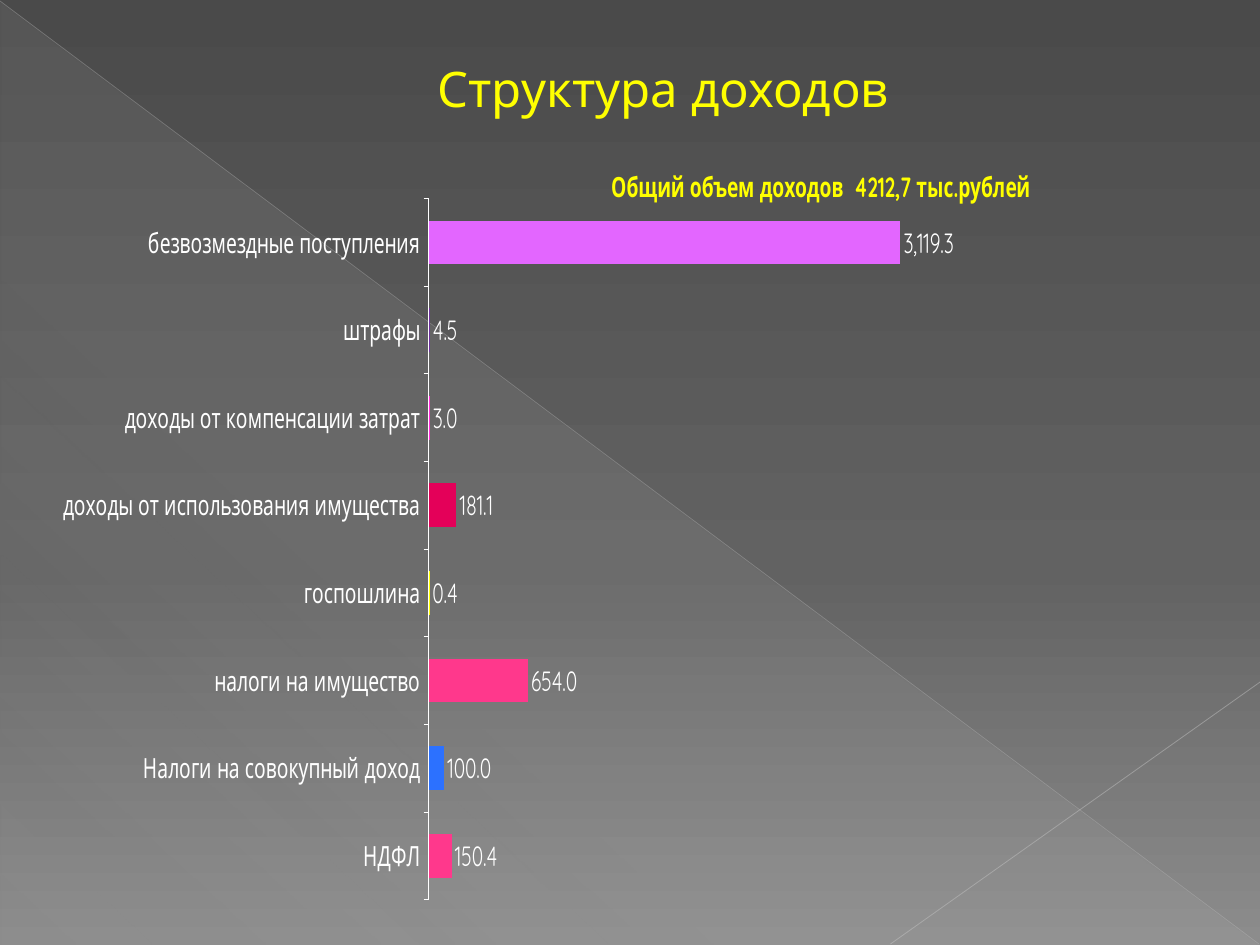
from dataclasses import dataclass

from pptx import Presentation, util as u
from pptx.chart.data import CategoryChartData
from pptx.dml.color import RGBColor
from pptx.enum import chart as charts, shapes, text
from pptx.oxml import parse_xml
from pptx.oxml.ns import nsdecls


@dataclass(frozen=True)
class Theme:
    font: str = "Quicksand"
    title_size: float = 28
    chart_size: float = 15.9
    heading: str = "FFFF00"
    heading_outline: str = "B12761"
    body: str = "FFFFFF"
    background: tuple = ((0, "4A4A4A", 100), (60, "626262", 100), (100, "8C8C8C", 100))
    triangle: tuple = ((0, "D2D2D2", 10), (70, "D2D2D2", 8), (100, "D2D2D2", 1))
    long_line: str = "BFBFBF"
    short_line: str = "C6C6C6"


THEME = Theme()

# Category, value in thousand roubles, bar colour
INCOME = [
    ("НДФЛ", 150.4, "FF388C"),
    ("Налоги на совокупный доход", 100, "2C71FF"),
    ("налоги на имущество", 654, "FF388C"),
    ("госпошлина", 0.4, "FFFF00"),
    ("доходы от использования имущества", 181.1, "E40059"),
    ("доходы от компенсации затрат", 3, "FF2BD8"),
    ("штрафы", 4.5, "7030A0"),
    ("безвозмездные поступления", 3119.3, "E366FF"),
]


def color(value):
    return RGBColor.from_string(value)


def set_gradient(parent, stops, angle):
    """Replace the solid fill of a properties element by a linear gradient."""
    stop_xml = "".join(
        f'<a:gs pos="{position * 1000}"><a:srgbClr val="{value}">'
        f'<a:alpha val="{opacity * 1000}"/></a:srgbClr></a:gs>'
        for position, value, opacity in stops)
    gradient = parse_xml(
        f'<a:gradFill {nsdecls("a")} rotWithShape="1"><a:gsLst>{stop_xml}</a:gsLst>'
        f'<a:lin ang="{angle * 60000}" scaled="0"/></a:gradFill>')
    parent.replace(parent.xpath("a:solidFill")[0], gradient)


def add_line(slide, start, end, line_color, width, opacity):
    line = slide.shapes.add_connector(
        shapes.MSO_CONNECTOR.STRAIGHT, *map(u.Cm, start + end))
    line.line.color.rgb = color(line_color)
    line.line.width = u.Pt(width)
    properties = line.element.spPr
    properties.xpath("a:ln/a:solidFill/a:srgbClr")[0].append(
        parse_xml(f'<a:alpha {nsdecls("a")} val="{opacity * 1000}"/>'))
    properties.append(parse_xml(f'<a:effectLst {nsdecls("a")}/>'))


def format_font(font, size, font_color, bold=False):
    font.name = THEME.font
    font.size = u.Pt(size)
    font.bold = bold
    font.color.rgb = color(font_color)


def write_text(frame, content, *, size, font_color, bold=False, align=None,
               indent=0, outline=None):
    paragraph = frame.paragraphs[0]
    paragraph.alignment = align
    if indent:
        paragraph._p.get_or_add_pPr().set("marL", str(u.Cm(indent)))
    run = paragraph.add_run()
    run.text = content
    format_font(run.font, size, font_color, bold)
    if outline:
        run._r.get_or_add_rPr().insert(0, parse_xml(
            f'<a:ln {nsdecls("a")} w="{u.Pt(0.5)}"><a:solidFill>'
            f'<a:srgbClr val="{outline}"/></a:solidFill></a:ln>'))


def set_layout(parent, index, target=None, **places):
    """Place a chart part by fractions of the chart's size."""
    for layout in parent.xpath("c:layout"):
        parent.remove(layout)
    target_xml = f'<c:layoutTarget val="{target}"/>' if target else ""
    modes = "".join(f'<c:{key}Mode val="edge"/>' for key in places if key in "xy")
    values = "".join(f'<c:{key} val="{value}"/>' for key, value in places.items())
    parent.insert(index, parse_xml(
        f'<c:layout {nsdecls("c")}><c:manualLayout>{target_xml}{modes}{values}'
        f'</c:manualLayout></c:layout>'))


def add_background(slide):
    slide.background.fill.solid()
    set_gradient(slide.element.xpath("p:cSld/p:bg/p:bgPr")[0], THEME.background, 90)
    triangle = slide.shapes.add_shape(
        shapes.MSO_SHAPE.RIGHT_TRIANGLE, u.Cm(0.02), u.Cm(0.04), u.Cm(25.36), u.Cm(19))
    triangle.shadow.inherit = False
    triangle.line.fill.background()
    triangle.fill.solid()
    set_gradient(triangle.element.spPr, THEME.triangle, 133)
    add_line(slide, (0, 0.02), (25.38, 19.03), THEME.long_line, 0.39, 35)
    add_line(slide, (25.4, 13.75), (17.95, 19.03), THEME.short_line, 0.47, 45)


def add_title(slide):
    box = slide.shapes.add_textbox(u.Cm(1.27), u.Cm(0.78), u.Cm(22.86), u.Cm(2))
    frame = box.text_frame
    frame.word_wrap = True
    frame.vertical_anchor = text.MSO_ANCHOR.MIDDLE
    write_text(frame, "Структура доходов", size=THEME.title_size,
               font_color=THEME.heading, align=text.PP_ALIGN.CENTER,
               indent=1.35, outline=THEME.heading_outline)


def add_income_chart(slide):
    names, values, bar_colors = zip(*INCOME)
    data = CategoryChartData(number_format="General")
    data.categories = names
    data.add_series("Series 1", values)
    chart = slide.shapes.add_chart(
        charts.XL_CHART_TYPE.BAR_CLUSTERED, u.Cm(1.27), u.Cm(2.77),
        u.Cm(23.34), u.Cm(16.28), data).chart
    format_font(chart.font, THEME.chart_size, THEME.body)
    chart.has_legend = False

    # Heading
    chart.has_title = True
    write_text(chart.chart_title.text_frame, "Общий объем доходов  4212,7 тыс.рублей",
               size=THEME.chart_size, font_color=THEME.heading, bold=True)
    set_layout(chart.element.xpath("c:chart/c:title")[0], 1, x=0.235, y=0.03)
    set_layout(chart.element.xpath("c:chart/c:plotArea")[0], 0, "inner",
               x=0.012, y=0.076, w=0.622, h=0.868)

    # Axes
    value_axis = chart.value_axis
    value_axis.minimum_scale = 0
    value_axis.major_unit = 100
    value_axis.has_major_gridlines = False
    value_axis.visible = False
    category_axis = chart.category_axis
    category_axis.major_tick_mark = charts.XL_TICK_MARK.OUTSIDE
    category_axis.format.line.color.rgb = color(THEME.body)

    # Bars and their values
    plot = chart.plots[0]
    plot.gap_width = 100
    plot.vary_by_categories = False
    series = plot.series[0]
    series.invert_if_negative = False
    for index, bar_color in enumerate(bar_colors):
        fill = series.points[index].format.fill
        fill.solid()
        fill.fore_color.rgb = color(bar_color)
    labels = series.data_labels
    labels.show_value = True
    labels.number_format = "#,##0.0"
    labels.number_format_is_linked = False
    labels.position = charts.XL_LABEL_POSITION.OUTSIDE_END
    format_font(labels.font, THEME.chart_size, THEME.body)


def main():
    presentation = Presentation()
    presentation.slide_width, presentation.slide_height = u.Cm(25.4), u.Cm(19.05)
    slide = presentation.slides.add_slide(presentation.slide_layouts[6])
    add_background(slide)
    add_title(slide)
    add_income_chart(slide)
    presentation.save("out.pptx")


if __name__ == "__main__":
    main()
